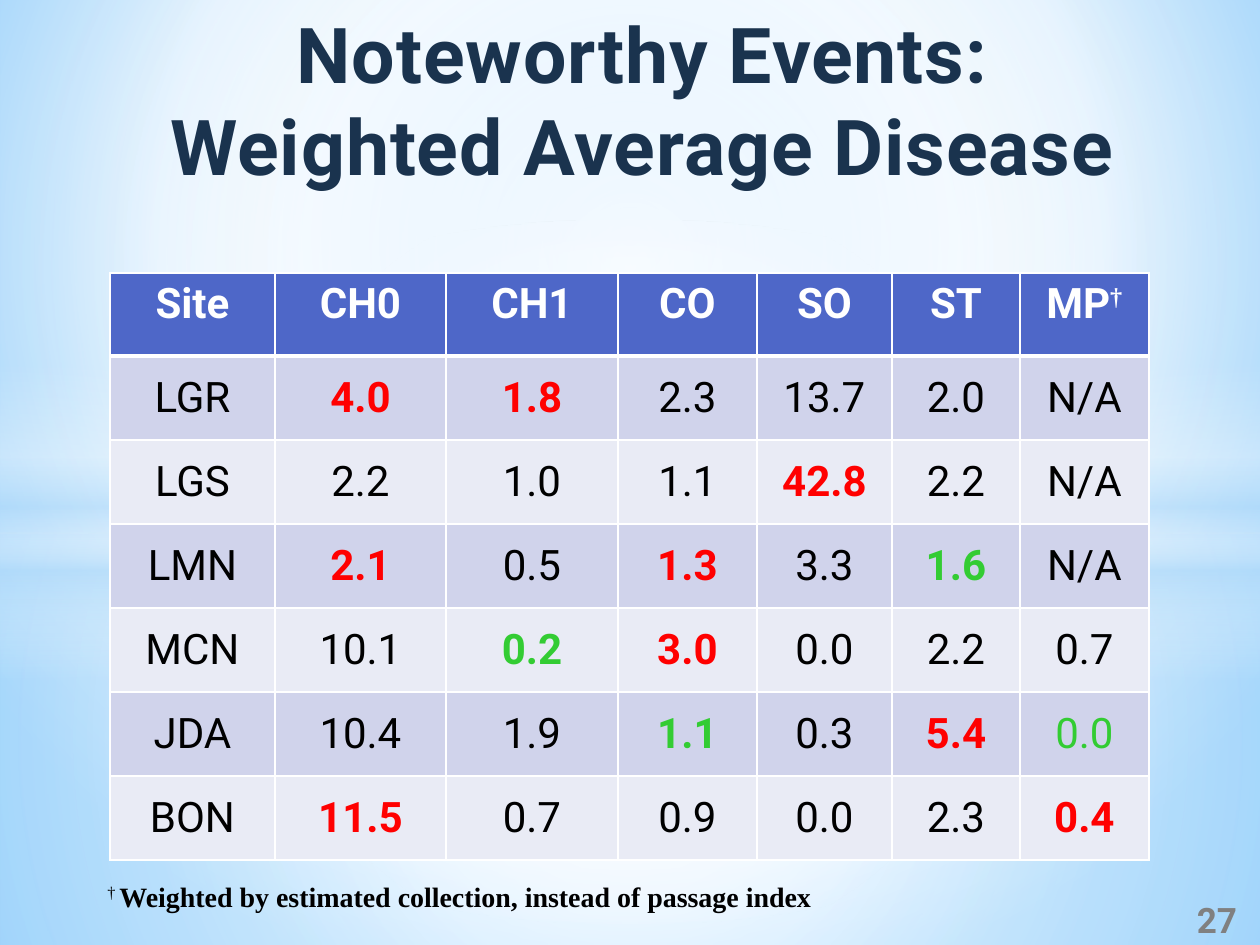
from typing import NamedTuple

from lxml import etree
from pptx import Presentation
from pptx import util as u
from pptx.dml.color import RGBColor
from pptx.enum import shapes, text
from pptx.oxml.ns import qn

EMU_PER_PX = 914400 / 126
WHITE = RGBColor(0xFF, 0xFF, 0xFF)
BLACK = RGBColor(0x00, 0x00, 0x00)
NAVY = RGBColor(0x1A, 0x33, 0x4E)
GRAY = RGBColor(0x80, 0x80, 0x80)
RED = RGBColor(0xFF, 0x00, 0x00)
GREEN = RGBColor(0x33, 0xCC, 0x33)
HEADER = RGBColor(0x4E, 0x67, 0xC8)
BANDS = (RGBColor(0xD0, 0xD3, 0xEB), RGBColor(0xE9, 0xEB, 0xF5))
SKY = RGBColor(0x9E, 0xD5, 0xFF)
AZURE = RGBColor(0x5B, 0xB9, 0xFF)
MIST = RGBColor(0xB4, 0xDC, 0xFA)
SANS, SERIF = "Roboto", "Times New Roman"


class Stop(NamedTuple):
    place: int
    color: RGBColor
    opacity: int = 100


class Gradient(NamedTuple):
    stops: tuple[Stop, ...]
    focus: tuple[int, ...] | None = (50, 50, 50, 50)


class Box(NamedTuple):
    left: int
    top: int
    width: int
    height: int


class Glow(NamedTuple):
    kind: shapes.MSO_SHAPE
    box: Box
    gradient: Gradient


class Style(NamedTuple):
    size: int
    color: RGBColor
    bold: bool = False
    name: str = SANS
    raised: bool = False


class Entry(NamedTuple):
    text: str
    color: RGBColor = BLACK
    bold: bool = False


BACKDROP = Gradient((Stop(0, SKY), Stop(60, WHITE), Stop(100, AZURE)), (20, 10, 20, 60))
GLOWS = (
    Glow(shapes.MSO_SHAPE.RECTANGLE, Box(0, 533, 1260, 412),
         Gradient((Stop(0, WHITE, 91), Stop(37, WHITE, 76), Stop(100, MIST, 79)))),
    Glow(shapes.MSO_SHAPE.RECTANGLE, Box(0, 0, 1260, 533),
         Gradient((Stop(0, WHITE, 89), Stop(48, WHITE, 62), Stop(100, MIST, 79)))),
    Glow(shapes.MSO_SHAPE.RECTANGLE, Box(0, 365, 1260, 315),
         Gradient((Stop(0, WHITE, 0), Stop(29, WHITE, 30), Stop(45, MIST, 40),
                   Stop(55, WHITE, 26), Stop(65, MIST, 60), Stop(100, WHITE, 0)), None)),
    Glow(shapes.MSO_SHAPE.OVAL, Box(0, 220, 1260, 703),
         Gradient((Stop(0, WHITE), Stop(54, WHITE, 0)))),
)
COLUMN_WIDTHS = (165, 171, 172, 139, 135, 128, 129)
ROW_HEIGHTS = (83,) + (84,) * 6
HEADINGS = ("Site", "CH0", "CH1", "CO", "SO", "ST", "MP†")
READINGS = (
    ("LGR", "4.0", "1.8", "2.3", "13.7", "2.0", "N/A"),
    ("LGS", "2.2", "1.0", "1.1", "42.8", "2.2", "N/A"),
    ("LMN", "2.1", "0.5", "1.3", "3.3", "1.6", "N/A"),
    ("MCN", "10.1", "0.2", "3.0", "0.0", "2.2", "0.7"),
    ("JDA", "10.4", "1.9", "1.1", "0.3", "5.4", "0.0"),
    ("BON", "11.5", "0.7", "0.9", "0.0", "2.3", "0.4"),
)
HIGHS = {("LGR", "CH0"), ("LGR", "CH1"), ("LGS", "SO"), ("LMN", "CH0"), ("LMN", "CO"),
         ("MCN", "CO"), ("JDA", "ST"), ("BON", "CH0"), ("BON", "MP†")}
LOWS = {("LMN", "ST"), ("MCN", "CH1"), ("JDA", "CO"), ("JDA", "MP†")}


def px(length: int) -> u.Emu:
    return u.Emu(round(length * EMU_PER_PX))


def place(box: Box) -> tuple[u.Emu, ...]:
    return tuple(px(length) for length in box)


def paint(fill, element, gradient: Gradient) -> None:
    fill.gradient()
    node = next(element.iter(qn("a:gradFill")))
    node.clear()
    stops = etree.SubElement(node, qn("a:gsLst"))
    for stop in gradient.stops:
        mark = etree.SubElement(stops, qn("a:gs"), pos=str(stop.place * 1000))
        color = etree.SubElement(mark, qn("a:srgbClr"), val=str(stop.color))
        etree.SubElement(color, qn("a:alpha"), val=str(stop.opacity * 1000))
    if gradient.focus is None:
        etree.SubElement(node, qn("a:lin"), ang="5400000", scaled="0")
        return
    path = etree.SubElement(node, qn("a:path"), path="circle")
    sides = {side: str(value * 1000) for side, value in zip("ltrb", gradient.focus)}
    etree.SubElement(path, qn("a:fillToRect"), sides)


def add_glow(page, glow: Glow) -> None:
    shape = page.shapes.add_shape(glow.kind, *place(glow.box))
    shape.shadow.inherit = False
    shape.line.fill.background()
    paint(shape.fill, shape.element, glow.gradient)


def add_span(para, words: str, style: Style):
    span = para.add_run()
    span.text = words
    span.font.size = u.Pt(style.size)
    span.font.name = style.name
    span.font.bold = style.bold
    span.font.color.rgb = style.color
    if style.raised:
        span.font._element.set("baseline", "30000")
    return span


def add_text(page, box: Box):
    frame = page.shapes.add_textbox(*place(box)).text_frame
    frame.word_wrap = True
    return frame


def indent(para, left: int, first: int) -> None:
    properties = para._p.get_or_add_pPr()
    properties.set("marL", str(px(left)))
    properties.set("indent", str(px(first)))


def add_title(page, lines: tuple[str, ...]) -> None:
    frame = add_text(page, Box(0, 0, 1260, 95))
    for number, line in enumerate(lines):
        para = frame.add_paragraph() if number else frame.paragraphs[0]
        para.alignment = text.PP_ALIGN.CENTER
        indent(para, 25, 0)
        span = add_span(para, line, Style(44, NAVY, True))
        span.font._element.set("spc", "50")


def set_borders(cell, top: int, bottom: int) -> None:
    properties = cell._tc.get_or_add_tcPr()
    for order, (side, points) in enumerate(zip("LRTB", (1, 1, top, bottom))):
        line = etree.Element(qn(f"a:ln{side}"), w=str(u.Pt(points)))
        fill = etree.SubElement(line, qn("a:solidFill"))
        etree.SubElement(fill, qn("a:srgbClr"), val=str(WHITE))
        properties.insert(order, line)


def make_entry(site: str, heading: str, value: str) -> Entry:
    key = (site, heading)
    if key in HIGHS:
        return Entry(value, RED, True)
    if key in LOWS:
        return Entry(value, GREEN, key != ("JDA", "MP†"))
    return Entry(value)


def fill_cell(cell, entry: Entry, row: int, column: int) -> None:
    cell.fill.solid()
    cell.fill.fore_color.rgb = BANDS[(row - 1) % 2] if row else HEADER
    set_borders(cell, 3 if row == 1 else 1, 1 if row else 3)
    if row:
        cell.vertical_anchor = text.MSO_ANCHOR.MIDDLE
    if row and column:
        cell.margin_left = cell.margin_right = cell.margin_top = px(1)
        cell.margin_bottom = 0
    para = cell.text_frame.paragraphs[0]
    para.alignment = text.PP_ALIGN.CENTER
    add_span(para, entry.text.rstrip("†"), Style(24, entry.color, entry.bold))
    if entry.text.endswith("†"):
        add_span(para, "†", Style(24, entry.color, entry.bold, SERIF, True))


def add_disease_table(page) -> None:
    box = Box(110, 273, sum(COLUMN_WIDTHS), sum(ROW_HEIGHTS))
    table = page.shapes.add_table(len(ROW_HEIGHTS), len(COLUMN_WIDTHS), *place(box)).table
    for column, width in zip(table.columns, COLUMN_WIDTHS):
        column.width = px(width)
    for row, height in zip(table.rows, ROW_HEIGHTS):
        row.height = px(height)
    entries = [[Entry(heading, WHITE, True) for heading in HEADINGS]]
    entries += [[make_entry(values[0], *pair) for pair in zip(HEADINGS, values)]
                for values in READINGS]
    for row, line in enumerate(entries):
        for column, entry in enumerate(line):
            fill_cell(table.cell(row, column), entry, row, column)


def main() -> None:
    deck = Presentation()
    deck.slide_width, deck.slide_height = px(1260), px(945)
    page = deck.slides.add_slide(deck.slide_layouts[6])
    paint(page.background.fill, page.element, BACKDROP)
    for glow in GLOWS:
        add_glow(page, glow)
    add_title(page, ("Noteworthy Events:", "Weighted Average Disease"))
    add_disease_table(page)

    number = add_text(page, Box(1176, 895, 82, 50))
    number.vertical_anchor = text.MSO_ANCHOR.MIDDLE
    number.paragraphs[0].alignment = text.PP_ALIGN.CENTER
    add_span(number.paragraphs[0], "27", Style(20, GRAY, True))

    footnote = add_text(page, Box(95, 873, 1081, 47)).paragraphs[0]
    indent(footnote, 32, -32)
    add_span(footnote, "† ", Style(16, BLACK, False, SERIF, True))
    add_span(footnote, "Weighted by estimated collection, instead of passage index",
             Style(16, BLACK, True, SERIF))
    deck.save("out.pptx")


if __name__ == "__main__":
    main()
